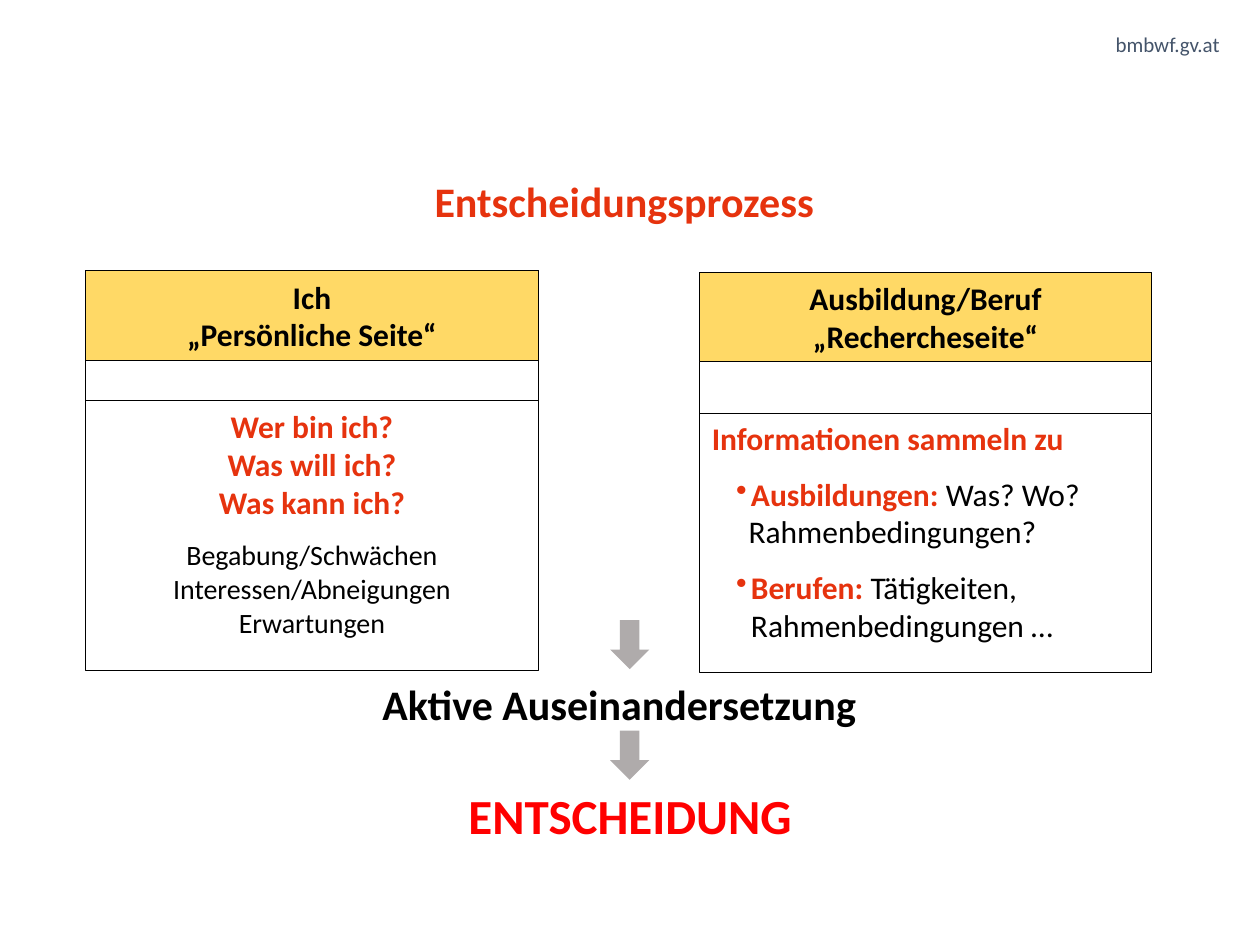
from lxml.etree import SubElement
from pptx import Presentation
from pptx.dml.color import RGBColor
from pptx.enum.shapes import MSO_SHAPE as Shape
from pptx.enum.text import MSO_ANCHOR as Anchor, PP_ALIGN as Align
from pptx.oxml.ns import qn
from pptx.util import Cm, Pt

RED, BLACK, WHITE, YELLOW, GREY = "E6330E", "000000", "FFFFFF", "FFD966", "AFABAB"


def colour(value):
    return RGBColor.from_string(value)


class Builder:
    font_name = "Calibri"

    def __init__(self, page):
        self.page = page

    def fill_text(self, frame, lines, anchor=Anchor.TOP):
        frame.word_wrap = True
        frame.vertical_anchor = anchor
        for index, entry in enumerate(lines):
            para = frame.paragraphs[0] if index == 0 else frame.add_paragraph()
            self.paragraph(para, **entry)

    def paragraph(self, para, spans, size, align=Align.CENTER, before=0,
                  left=0, hanging=0, bullet=False, spacing=None):
        para.alignment = align
        para.space_before = Pt(before)
        if spacing:
            para.line_spacing = spacing
        properties = para._p.get_or_add_pPr()
        properties.set("marL", str(Cm(left)))
        properties.set("indent", str(Cm(-hanging)))
        if bullet:
            tint = SubElement(properties, qn("a:buClr"))
            SubElement(tint, qn("a:srgbClr"), val=spans[0][1])
            SubElement(properties, qn("a:buChar"), char="•")
        para.font.name = self.font_name
        para.font.size = Pt(size)
        if len(spans) == 1:
            para.font.color.rgb = colour(spans[0][1])
            para.font.bold = spans[0][2]
        for text, tone, bold in spans:
            span = para.add_run()
            span.text = text
            if len(spans) > 1:
                span.font.color.rgb = colour(tone)
                span.font.bold = bold

    def text(self, left, top, width, height, lines, margin=None):
        frame = self.page.shapes.add_textbox(
            Cm(left), Cm(top), Cm(width), Cm(height)).text_frame
        if margin is not None:
            frame.margin_left = frame.margin_right = Cm(margin)
            frame.margin_top = frame.margin_bottom = Cm(margin)
        self.fill_text(frame, lines)

    def shape(self, kind, left, top, width, height, fill, outlined=True):
        shape = self.page.shapes.add_shape(
            kind, Cm(left), Cm(top), Cm(width), Cm(height))
        shape.shadow.inherit = False
        shape.fill.solid()
        shape.fill.fore_color.rgb = colour(fill)
        if outlined:
            shape.line.color.rgb = colour(BLACK)
            shape.line.width = Pt(0.5)
        else:
            shape.line.fill.background()
        return shape

    def arrow(self, top):
        self.shape(Shape.DOWN_ARROW, 12.3, top, 0.79, 0.99, GREY, outlined=False)

    def panel(self, left, top, frame_height, body_top, body_height, heading, body):
        width = 9.12
        self.shape(Shape.RECTANGLE, left, top, width, frame_height, WHITE)
        header = self.shape(Shape.RECTANGLE, left, top, width, 1.8, YELLOW)
        self.fill_text(header.text_frame,
                       [line(text, 18, bold=True) for text in heading], Anchor.MIDDLE)
        content = self.shape(Shape.RECTANGLE, left, body_top, width, body_height, WHITE)
        self.fill_text(content.text_frame, body)


def line(text, size, tone=BLACK, bold=False, **layout):
    return dict(spans=[(text, tone, bold)], size=size, **layout)


def topic(label, text, **layout):
    return dict(spans=[(label, RED, True), (text, BLACK, False)], size=18,
                align=Align.LEFT, left=0.79, hanging=0.3, bullet=True, **layout)


def main():
    deck = Presentation()
    deck.slide_width, deck.slide_height = Cm(25.4), Cm(19.05)
    slide = Builder(deck.slides.add_slide(deck.slide_layouts[6]))

    slide.text(18.47, 0.64, 6.12, 0.51,
               [line("bmbwf.gv.at", 12, "44546A", align=Align.RIGHT)], margin=0)

    questions = ["Wer bin ich?", "Was will ich?", "Was kann ich?"]
    personal = [line(text, 18, RED, True) for text in questions] + [
        line("Begabung/Schwächen Interessen/Abneigungen", 16, before=10),
        line("Erwartungen", 16),
    ]
    slide.panel(1.73, 5.46, 7.54, 8.08, 5.44,
                ["Ich", "„Persönliche Seite“"], personal)

    research = [
        line("Informationen sammeln zu", 18, RED, True, align=Align.LEFT),
        topic("Ausbildungen: ", "Was? Wo?", before=10),
        line("Rahmenbedingungen?", 18, align=Align.LEFT, left=0.74),
        topic("Berufen: ", "Tätigkeiten, Rahmenbedingungen …", before=10),
    ]
    slide.panel(14.1, 5.49, 8.03, 8.33, 5.23,
                ["Ausbildung/Beruf", "„Rechercheseite“"], research)

    slide.text(1.73, 13.56, 21.51, 1.27,
               [line("Aktive Auseinandersetzung", 24, bold=True)])
    slide.arrow(14.73)
    slide.text(0, 15.72, 25.4, 1.45, [line("ENTSCHEIDUNG", 28, "FF0000", True)])
    slide.arrow(12.5)
    slide.text(1.5, 3.66, 22.17, 2.31,
               [line("Entscheidungsprozess", 24, RED, True, spacing=0.9)], margin=0)

    deck.save("out.pptx")


if __name__ == "__main__":
    main()
